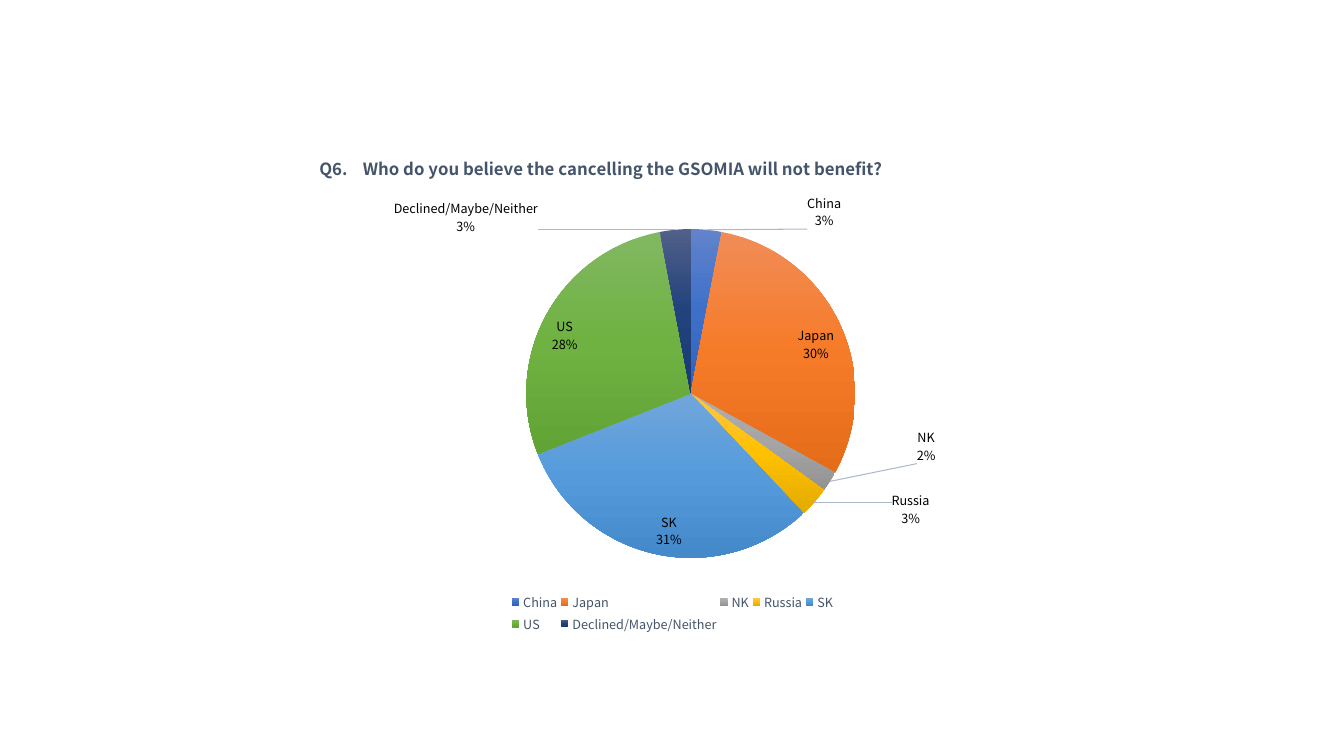
from dataclasses import dataclass

from pptx import Presentation
from pptx.chart.data import CategoryChartData
from pptx.dml.color import RGBColor
from pptx.enum.chart import XL_CHART_TYPE, XL_LABEL_POSITION, XL_LEGEND_POSITION
from pptx.oxml import parse_xml
from pptx.oxml.ns import nsdecls
from pptx.util import Inches, Pt

PIE = XL_CHART_TYPE.PIE
BOTTOM = XL_LEGEND_POSITION.BOTTOM
INSIDE_END = XL_LABEL_POSITION.INSIDE_END
OUTSIDE_END = XL_LABEL_POSITION.OUTSIDE_END


@dataclass(frozen=True)
class Theme:
    font: str = "Noto Sans CJK KR"
    ink: str = "44546A"
    label: str = "000000"
    leader: str = "ADB9CA"
    title_size: int = 12
    base_size: int = 10
    small_size: int = 9


THEME = Theme()
QUESTION = "Q6.    Who do you believe the cancelling the GSOMIA will not benefit?"

# Answer, share in percent, gradient from top to bottom
ANSWERS = [
    ("China", 3, ("6183CB", "3E70CA", "3062BB")),
    ("Japan", 30, ("F18C57", "F67B28", "E56C19")),
    ("NK", 2, ("AFAFAF", "A5A5A5", "939393")),
    ("Russia", 3, ("FFC64B", "FFC000", "E3AB00")),
    ("SK", 31, ("71A6DB", "559BDB", "448ACA")),
    ("US", 28, ("81B861", "6FB242", "62A336")),
    ("Declined/Maybe/Neither", 3, ("516089", "22427D", "1A3A72")),
]

# Shift of the labels outside the pie, as shares of the chart's size
LABEL_SHIFTS = {0: (0.11, 0.01), 2: (0.09, -0.11), 3: (0.08, -0.03), 6: (-0.15, 0.02)}


def style_font(font, size, color, bold=False):
    font.name = THEME.font
    font.size = Pt(size)
    font.bold = bold
    font.color.rgb = RGBColor.from_string(color)


def layout_xml(x, y, w=None, h=None, inner=False, edge=True):
    parts = ['<c:layoutTarget val="inner"/>'] if inner else []
    if edge:
        parts += ['<c:xMode val="edge"/>', '<c:yMode val="edge"/>']
    sizes = {"x": x, "y": y, "w": w, "h": h}
    parts += [f'<c:{k} val="{v}"/>' for k, v in sizes.items() if v is not None]
    return parse_xml(f'<c:layout {nsdecls("c")}><c:manualLayout>{"".join(parts)}'
                     "</c:manualLayout></c:layout>")


def set_layout(parent, before, layout):
    """Put the layout in front of the first of the named children."""
    for old in parent.xpath("c:layout"):
        parent.remove(old)
    parent.xpath(before)[0].addprevious(layout)


def fill_slice(point, sp_pr, colors):
    point.format.line.fill.background()
    stops = "".join(f'<a:gs pos="{i * 50000}"><a:srgbClr val="{c}"/></a:gs>'
                    for i, c in enumerate(colors))
    sp_pr.insert(0, parse_xml(
        f'<a:gradFill {nsdecls("a")} rotWithShape="1"><a:gsLst>{stops}</a:gsLst>'
        '<a:lin ang="5400000" scaled="0"/></a:gradFill>'))


def move_label(point, ser, index, shift):
    label = point.data_label
    style_font(label.font, THEME.small_size, THEME.label)
    label.position = OUTSIDE_END
    d_lbl = ser.xpath(f'c:dLbls/c:dLbl[c:idx/@val="{index}"]')[0]
    for tag, value in (("showVal", "0"), ("showCatName", "1"), ("showPercent", "1")):
        d_lbl.xpath(f"c:{tag}")[0].set("val", value)
    set_layout(d_lbl, "c:idx/following-sibling::*", layout_xml(*shift, edge=False))


def add_labels(plot, ser):
    plot.has_data_labels = True
    series = plot.series[0]
    labels = series.data_labels
    labels.show_value = False
    labels.show_category_name = True
    labels.show_percentage = True
    labels.number_format = "0%"
    labels.number_format_is_linked = False
    labels.position = INSIDE_END
    style_font(labels.font, THEME.small_size, THEME.label)
    for index, shift in LABEL_SHIFTS.items():
        move_label(series.points[index], ser, index, shift)

    # Leader lines
    d_lbls = ser.xpath("c:dLbls")[0]
    for old in d_lbls.xpath("c:showLeaderLines"):
        d_lbls.remove(old)
    d_lbls.append(parse_xml(f'<c:showLeaderLines {nsdecls("c")} val="1"/>'))
    d_lbls.append(parse_xml(
        f'<c:leaderLines {nsdecls("c", "a")}><c:spPr><a:ln w="9525"><a:solidFill>'
        f'<a:srgbClr val="{THEME.leader}"/></a:solidFill></a:ln></c:spPr></c:leaderLines>'))


def add_pie(s):
    data = CategoryChartData()
    data.categories = [name for name, _, _ in ANSWERS]
    data.add_series(QUESTION, [share for _, share, _ in ANSWERS])
    frame = s.shapes.add_chart(PIE, Inches(2.14), Inches(1.19),
                               Inches(9.06), Inches(5.12), data)
    chart = frame.chart
    style_font(chart.font, THEME.base_size, THEME.label)

    # Title
    chart.has_title = True
    tf = chart.chart_title.text_frame
    tf.text = QUESTION
    style_font(tf.paragraphs[0].font, THEME.title_size, THEME.ink, bold=True)
    chart_el = chart._chartSpace.chart
    set_layout(chart_el.xpath("c:title")[0], "c:overlay", layout_xml(0.11, 0.06))

    # Legend
    chart.has_legend = True
    chart.legend.position = BOTTOM
    chart.legend.include_in_layout = False
    style_font(chart.legend.font, THEME.small_size, THEME.ink)
    set_layout(chart_el.xpath("c:legend")[0], "c:overlay",
               layout_xml(0.32, 0.91, 0.36, 0.09))

    # Slices and their labels
    plot = chart.plots[0]
    plot.vary_by_categories = True
    set_layout(chart_el.plotArea, "c:pieChart",
               layout_xml(0.34, 0.21, 0.36, 0.64, inner=True))
    ser = plot.series[0]._element
    for i, (_, _, colors) in enumerate(ANSWERS):
        point = plot.series[0].points[i]
        point.format.line.fill.background()
        fill_slice(point, ser.xpath(f'c:dPt[c:idx/@val="{i}"]/c:spPr')[0], colors)
    add_labels(plot, ser)


def main():
    prs = Presentation()
    prs.slide_width, prs.slide_height = Inches(13.33), Inches(7.5)
    s = prs.slides.add_slide(prs.slide_layouts[6])
    add_pie(s)
    prs.save("out.pptx")


if __name__ == "__main__":
    main()
